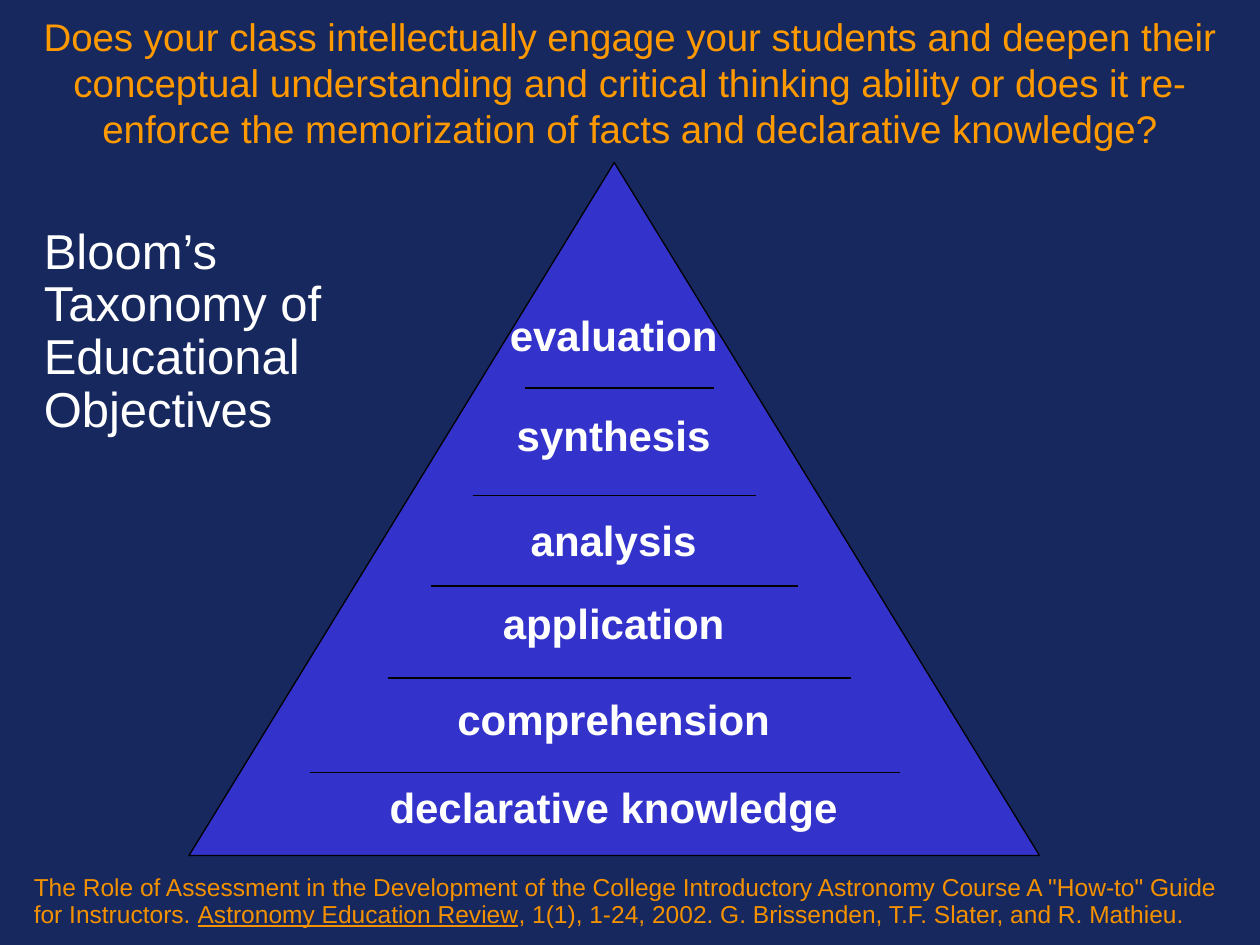
from typing import NamedTuple

from lxml.etree import SubElement
from pptx import Presentation
from pptx.dml.color import RGBColor
from pptx.enum.shapes import MSO_CONNECTOR, MSO_SHAPE
from pptx.enum.text import MSO_ANCHOR, PP_ALIGN
from pptx.oxml.ns import qn
from pptx.util import Inches, Pt

NAVY = RGBColor(0x16, 0x28, 0x5D)
BLUE = RGBColor(0x33, 0x33, 0xCC)
ORANGE = RGBColor(0xFF, 0x99, 0x00)
DARK_ORANGE = RGBColor(0xF4, 0x91, 0x00)
WHITE = RGBColor(0xFF, 0xFF, 0xFF)
BLACK = RGBColor(0x00, 0x00, 0x00)

FONT = "Arial"
LABEL_CENTER = 4.87


class Level(NamedTuple):
    name: str
    top: float
    width: float


class Divider(NamedTuple):
    left: float
    right: float
    y: float


LEVELS = [
    Level("evaluation", 2.45, 1.89),
    Level("synthesis", 3.25, 2.5),
    Level("analysis", 4.08, 2.5),
    Level("application", 4.74, 2.5),
    Level("comprehension", 5.5, 3.32),
    Level("declarative knowledge", 6.2, 4.26),
]
DIVIDERS = [
    Divider(4.17, 5.67, 3.08),
    Divider(3.75, 6, 3.93),
    Divider(3.42, 6.33, 4.65),
    Divider(3.08, 6.75, 5.38),
    Divider(2.46, 7.14, 6.13),
]


def add_text(shapes, text: str, left: float, top: float, width: float, height: float, *,
             size: float, color: RGBColor, bold: bool = False, underlined: str = "",
             align: PP_ALIGN = PP_ALIGN.LEFT, anchor: MSO_ANCHOR = MSO_ANCHOR.TOP,
             line_spacing: float = 0.9) -> None:
    """Add a text box; the phrase given as underlined becomes its own run."""
    box = shapes.add_textbox(Inches(left), Inches(top), Inches(width), Inches(height))
    frame = box.text_frame
    frame.word_wrap = True
    frame.vertical_anchor = anchor
    paragraph = frame.paragraphs[0]
    paragraph.alignment = align
    paragraph.line_spacing = line_spacing
    before, phrase, after = text.partition(underlined) if underlined else (text, "", "")
    for part in filter(None, (before, phrase, after)):
        run = paragraph.add_run()
        run.text = part
        run.font.name = FONT
        run.font.size = Pt(size)
        run.font.bold = bold
        run.font.color.rgb = color
        if part == underlined:
            run.font.underline = True


def add_divider(shapes, divider: Divider) -> None:
    line = shapes.add_connector(MSO_CONNECTOR.STRAIGHT, Inches(divider.left), Inches(divider.y),
                                Inches(divider.right), Inches(divider.y))
    line.line.color.rgb = BLACK
    line.line.width = Pt(0.75)
    SubElement(line._element.spPr, qn("a:effectLst"))


def add_pyramid(shapes) -> None:
    triangle = shapes.add_shape(MSO_SHAPE.ISOSCELES_TRIANGLE, Inches(1.5), Inches(1.29),
                                Inches(6.75), Inches(5.5))
    triangle.shadow.inherit = False
    triangle.fill.solid()
    triangle.fill.fore_color.rgb = BLUE
    triangle.line.color.rgb = BLACK
    triangle.line.width = Pt(0.75)
    for divider in DIVIDERS:
        add_divider(shapes, divider)
    for level in LEVELS:
        add_text(shapes, level.name, LABEL_CENTER - level.width / 2, level.top, level.width, 0.47,
                 size=24, color=WHITE, bold=True, align=PP_ALIGN.CENTER)


def main() -> None:
    presentation = Presentation()
    presentation.slide_width = Inches(10)
    presentation.slide_height = Inches(7.5)
    slide = presentation.slides.add_slide(presentation.slide_layouts[6])
    slide.background.fill.solid()
    slide.background.fill.fore_color.rgb = NAVY

    # Question at the top
    add_text(slide.shapes,
             "Does your class intellectually engage your students and deepen their conceptual "
             "understanding and critical thinking ability or does it re-enforce the memorization "
             "of facts and declarative knowledge?",
             0, 0.15, 10, 1, size=22, color=ORANGE, align=PP_ALIGN.CENTER,
             anchor=MSO_ANCHOR.MIDDLE, line_spacing=1.0)

    # Pyramid with its levels
    add_pyramid(slide.shapes.add_group_shape().shapes)

    # Citation and pyramid caption
    add_text(slide.shapes,
             "The Role of Assessment in the Development of the College Introductory Astronomy "
             "Course A \"How-to\" Guide for Instructors. Astronomy Education Review, 1(1), 1-24, "
             "2002. G. Brissenden, T.F. Slater, and R. Mathieu.",
             0.17, 6.9, 9.83, 0.53, size=14, color=DARK_ORANGE,
             underlined="Astronomy Education Review")
    add_text(slide.shapes, "Bloom’s Taxonomy of Educational Objectives",
             0.25, 1.75, 3, 1.81, size=28, color=WHITE)

    presentation.save("out.pptx")


if __name__ == "__main__":
    main()
